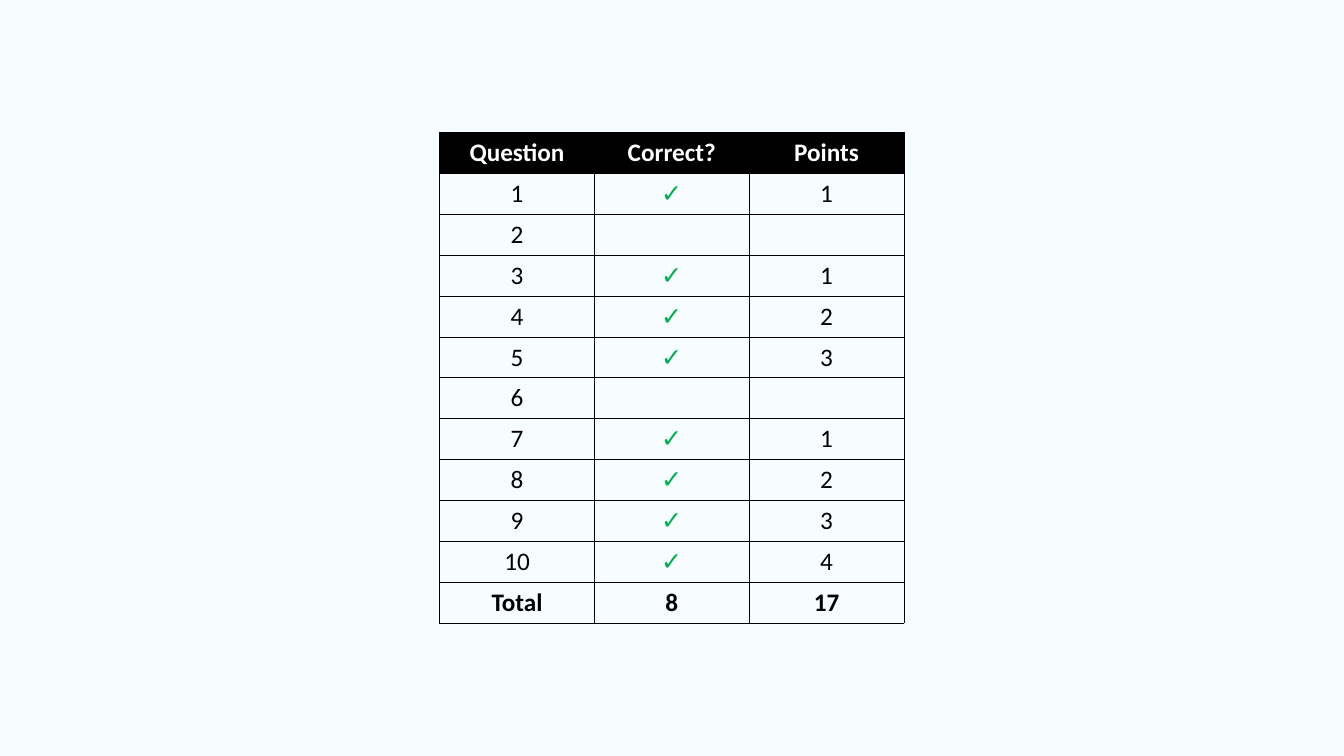
from lxml import etree
from pptx import Presentation
from pptx.dml.color import RGBColor
from pptx.enum.text import MSO_ANCHOR, PP_ALIGN
from pptx.oxml.ns import qn
from pptx.util import Cm, Pt

CENTER = PP_ALIGN.CENTER
MIDDLE = MSO_ANCHOR.MIDDLE
BLANK = 6

COLORS = {"back": "F7FCFF", "ink": "000000", "head": "FFFFFF", "tick": "00B050"}
TICK = "✓"
POINTS = [1, None, 1, 2, 3, None, 1, 2, 3, 4]
THIN, WIDE = 0.5, 1


def color(name):
    return RGBColor.from_string(COLORS[name])


class Sheet:
    """Holds the text style and the current slide."""

    def __init__(self, deck):
        self.slide = deck.slides.add_slide(deck.slide_layouts[BLANK])
        self.font = {"name": "Calibri", "size": Pt(18)}

    def back(self, name):
        fill = self.slide.background.fill
        fill.solid()
        fill.fore_color.rgb = color(name)

    def border(self, cell, widths):
        props = cell._tc.get_or_add_tcPr()
        for side, width in widths.items():
            line = etree.SubElement(props, qn(f"a:ln{side}"), w=str(Pt(width)))
            fill = etree.SubElement(line, qn("a:solidFill"))
            etree.SubElement(fill, qn("a:srgbClr"), val=COLORS["ink"])

    def label(self, cell, text, name, bold):
        cell.text = text
        cell.vertical_anchor = MIDDLE
        para = cell.text_frame.paragraphs[0]
        para.alignment = CENTER
        for run in para.runs:
            for key, value in {**self.font, "bold": bold}.items():
                setattr(run.font, key, value)
            run.font.color.rgb = color(name)

    def table(self, data, left, top, width, height):
        rows, cols = len(data), len(data[0])
        frame = self.slide.shapes.add_table(
            rows, cols, Cm(left), Cm(top), Cm(width * cols), Cm(height * rows))
        grid = frame.table
        grid.horz_banding = False
        for col in grid.columns:
            col.width = Cm(width)
        for r, values in enumerate(data):
            grid.rows[r].height = Cm(height)
            for c, text in enumerate(values):
                cell = grid.cell(r, c)
                # Inner vertical rules are wider than the rest
                self.border(cell, {
                    "L": WIDE if c else THIN,
                    "R": WIDE if c < cols - 1 else THIN,
                    "T": THIN,
                    "B": THIN,
                })
                # Black header, clear body
                if r == 0:
                    cell.fill.solid()
                    cell.fill.fore_color.rgb = color("ink")
                else:
                    cell.fill.background()
                name = "head" if r == 0 else "tick" if text == TICK else "ink"
                self.label(cell, text, name, r in (0, rows - 1))


def main():
    deck = Presentation()
    deck.slide_width, deck.slide_height = Cm(33.87), Cm(19.05)
    sheet = Sheet(deck)
    sheet.back("back")

    # Score table: one row per question, then the totals
    right = [p for p in POINTS if p]
    data = [["Question", "Correct?", "Points"]]
    for number, point in enumerate(POINTS, 1):
        data.append([str(number), TICK if point else "", str(point or "")])
    data.append(["Total", str(len(right)), str(sum(right))])
    sheet.table(data, left=11.08, top=3.34, width=3.9, height=1.03)

    deck.save("out.pptx")


if __name__ == "__main__":
    main()
